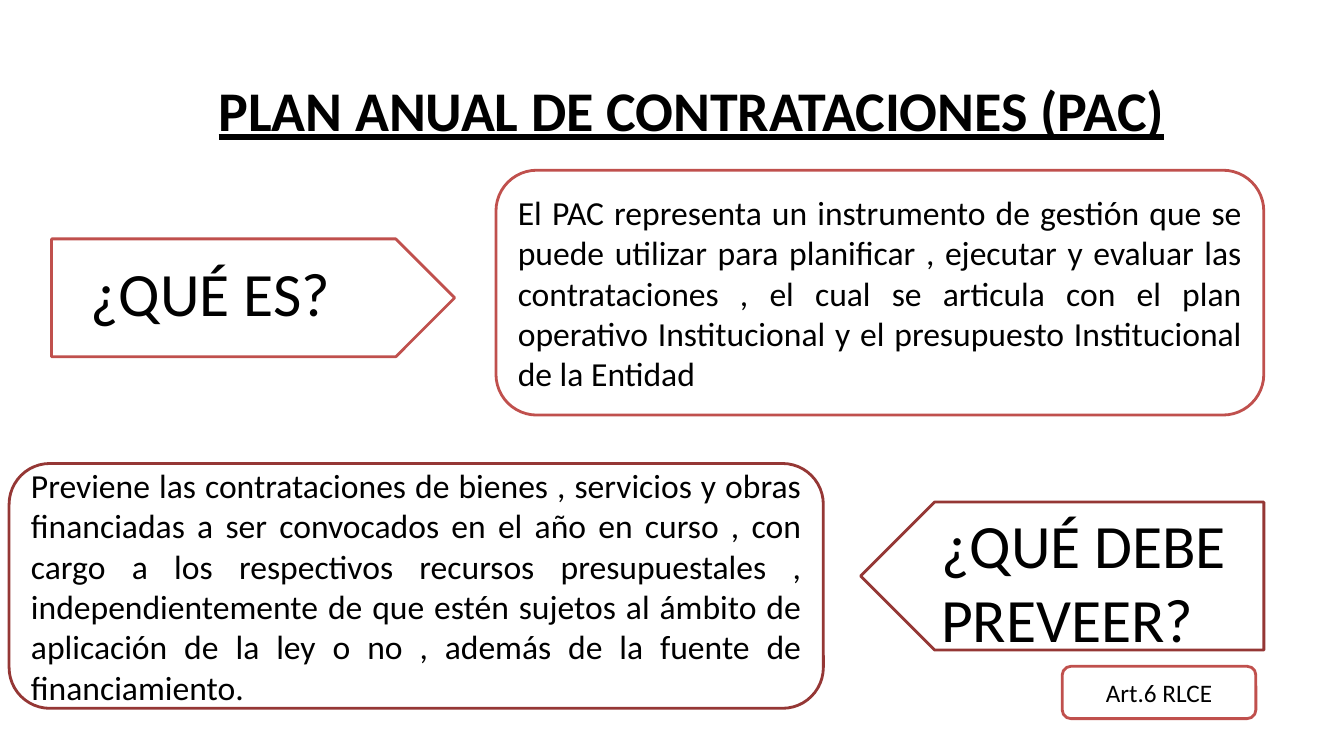
from pptx import Presentation
from pptx.dml.color import RGBColor as RGB
from pptx.enum.shapes import MSO_SHAPE as Kind
from pptx.enum.text import MSO_ANCHOR as Anchor, PP_ALIGN as Align
from pptx.util import Cm, Pt

COLORS = {"white": "FFFFFF", "black": "000000", "red": "C0504D", "dark": "953735"}

deck = Presentation()
deck.slide_width, deck.slide_height = Cm(33.87), Cm(19.05)
slide = deck.slides.add_slide(deck.slide_layouts[6])


def write(shape, text, size, align=Align.LEFT, anchor=Anchor.TOP):
    frame = shape.text_frame
    frame.word_wrap = True
    frame.vertical_anchor = anchor
    para = frame.paragraphs[0]
    para.alignment = align
    run = para.add_run()
    run.text = text
    run.font.name = "Calibri"
    run.font.size = Pt(size)
    run.font.color.rgb = RGB.from_string(COLORS["black"])
    return run


def draw(kind, color, box):
    shape = slide.shapes.add_shape(kind, *map(Cm, box))
    shape.shadow.inherit = False
    shape.fill.solid()
    shape.fill.fore_color.rgb = RGB.from_string(COLORS["white"])
    shape.line.color.rgb = RGB.from_string(COLORS[color])
    shape.line.width = Pt(2)
    return shape


# Title
title = slide.shapes.add_textbox(Cm(5.51), Cm(1.9), Cm(27.5), Cm(3.43))
frame = title.text_frame
frame.margin_left = frame.margin_right = frame.margin_top = frame.margin_bottom = 0
run = write(title, "PLAN ANUAL DE CONTRATACIONES (PAC)", 40)
run.font.bold = run.font.underline = True

# Arrows: color, box, turn
arrows = [
    ("dark", (21.69, 12.65, 10.16, 3.73), 180),
    ("red", (1.3, 6.02, 10.16, 2.97), 0),
]
for color, box, turn in arrows:
    draw(Kind.PENTAGON, color, box).rotation = turn

# Rounded panels: color, box, size, align, text
panels = [
    ("dark", (0.23, 11.68, 20.52, 6.17), 24, Align.JUSTIFY,
     "Previene las contrataciones de bienes , servicios y obras financiadas "
     "a ser convocados en el año en curso , con cargo a los respectivos "
     "recursos presupuestales , independientemente de que estén sujetos al "
     "ámbito de aplicación de la ley o no , además de la fuente de "
     "financiamiento."),
    ("red", (12.5, 4.29, 19.35, 6.17), 24, Align.JUSTIFY,
     "El PAC representa un instrumento de gestión que se puede utilizar para "
     "planificar , ejecutar y evaluar las contrataciones , el cual se "
     "articula con el plan operativo Institucional y el presupuesto "
     "Institucional de la Entidad"),
    ("red", (26.77, 16.79, 4.88, 1.32), 18, Align.CENTER, "Art.6 RLCE"),
]
for color, box, size, align, text in panels:
    write(draw(Kind.ROUNDED_RECTANGLE, color, box), text, size, align, Anchor.MIDDLE)

# Questions over the arrows
asks = [
    ("¿QUÉ ES?", (2.03, 6.3, 6.93, 2.13)),
    ("¿QUÉ DEBE PREVEER?", (23.47, 12.65, 7.75, 4.78)),
]
for text, box in asks:
    write(slide.shapes.add_textbox(*map(Cm, box)), text, 44)

deck.save("out.pptx")
